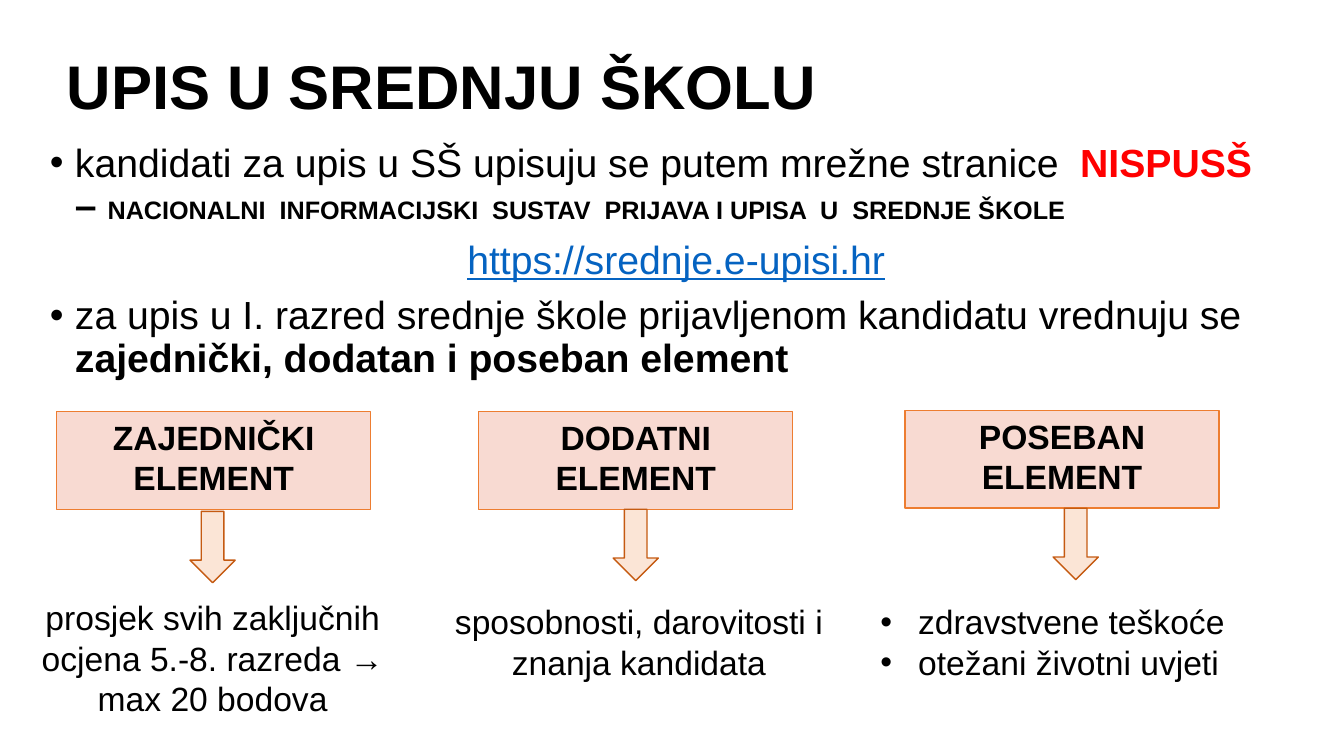
from lxml import etree
from pptx import Presentation
from pptx.dml.color import RGBColor
from pptx.enum.shapes import MSO_SHAPE
from pptx.enum.text import MSO_ANCHOR, PP_ALIGN
from pptx.oxml.ns import qn
from pptx.util import Emu, Pt

PX = 9525  # EMU in one px, 96 px to the inch
FONT = "Arial"
RECTANGLE, DOWN_ARROW = MSO_SHAPE.RECTANGLE, MSO_SHAPE.DOWN_ARROW
TOP, MIDDLE = MSO_ANCHOR.TOP, MSO_ANCHOR.MIDDLE
LEFT, CENTER = PP_ALIGN.LEFT, PP_ALIGN.CENTER

BLACK = RGBColor(0x00, 0x00, 0x00)
RED = RGBColor(0xFF, 0x00, 0x00)
LINK_BLUE = RGBColor(0x05, 0x63, 0xC1)
BOX_FILL = RGBColor(0xF8, 0xD7, 0xCE)
BOX_LINE = RGBColor(0xED, 0x7D, 0x31)
ARROW_FILL = RGBColor(0xFB, 0xE5, 0xD6)
ARROW_LINE = RGBColor(0xC5, 0x5A, 0x11)

BOX_WIDTH, BOX_HEIGHT = 299, 93
ARROW_WIDTH, ARROW_HEIGHT = 43, 68

# Heading, box left and top, arrow left and top
ELEMENTS = [
    ("ZAJEDNIČKI ELEMENT", 54, 392, 181, 487),
    ("DODATNI ELEMENT", 456, 392, 584, 485),
    ("POSEBAN ELEMENT", 862, 391, 1003, 484),
]


def place(left, top, width, height):
    return [Emu(length * PX) for length in (left, top, width, height)]


def add_text(slide, left, top, width, height, anchor=TOP):
    frame = slide.shapes.add_textbox(*place(left, top, width, height)).text_frame
    frame.word_wrap = True
    frame.vertical_anchor = anchor
    return frame


def add_paragraph(frame, first=False, align=LEFT, bullet_indent=0):
    paragraph = frame.paragraphs[0] if first else frame.add_paragraph()
    paragraph.alignment = align
    if bullet_indent:
        properties = paragraph._p.get_or_add_pPr()
        properties.set("marL", str(bullet_indent * PX))
        properties.set("indent", str(-bullet_indent * PX))
        etree.SubElement(properties, qn("a:buFont")).set("typeface", FONT)
        etree.SubElement(properties, qn("a:buChar")).set("char", "•")
    return paragraph


def add_run(paragraph, text, size, color=BLACK, bold=False, underline=False):
    run = paragraph.add_run()
    run.text = text
    run.font.name = FONT
    run.font.size = Pt(size)
    run.font.color.rgb = color
    run.font.bold = bold
    run.font.underline = underline


def add_filled_shape(slide, kind, left, top, width, height, fill, line):
    shape = slide.shapes.add_shape(kind, *place(left, top, width, height))
    shape.shadow.inherit = False
    shape.fill.solid()
    shape.fill.fore_color.rgb = fill
    shape.line.color.rgb = line
    shape.line.width = Pt(1)
    return shape


def add_element(slide, heading, box_left, box_top, arrow_left, arrow_top):
    box = add_filled_shape(slide, RECTANGLE, box_left, box_top,
                           BOX_WIDTH, BOX_HEIGHT, BOX_FILL, BOX_LINE)
    color = box.fill._xPr.find(qn("a:solidFill")).find(qn("a:srgbClr"))
    etree.SubElement(color, qn("a:alpha")).set("val", "90000")
    box.text_frame.word_wrap = True
    box.text_frame.vertical_anchor = TOP
    paragraph = add_paragraph(box.text_frame, first=True, align=CENTER)
    add_run(paragraph, heading, 24, bold=True)
    add_filled_shape(slide, DOWN_ARROW, arrow_left, arrow_top,
                     ARROW_WIDTH, ARROW_HEIGHT, ARROW_FILL, ARROW_LINE)


def add_title(slide):
    frame = add_text(slide, 54, 16, 1104, 139, MIDDLE)
    paragraph = add_paragraph(frame, first=True)
    paragraph.line_spacing = 0.9
    add_run(paragraph, "UPIS U SREDNJU ŠKOLU", 44, bold=True)


def add_body(slide):
    frame = add_text(slide, 38, 132, 1212, 250)

    website = add_paragraph(frame, first=True, bullet_indent=24)
    add_run(website, "kandidati za upis u SŠ upisuju se putem mrežne stranice  ", 28)
    add_run(website, "NISPUSŠ", 28, RED, bold=True)
    website.add_line_break()
    add_run(website, "– ", 28, bold=True)
    add_run(website, "NACIONALNI  INFORMACIJSKI  SUSTAV  PRIJAVA I UPISA  U  SREDNJE ŠKOLE",
            18, bold=True)

    address = add_paragraph(frame, align=CENTER)
    add_run(address, "https://srednje.e-upisi.hr", 28, LINK_BLUE, underline=True)

    grading = add_paragraph(frame, bullet_indent=24)
    add_run(grading, "za upis u I. razred srednje škole prijavljenom kandidatu vrednuju se ", 28)
    add_run(grading, "zajednički, dodatan i poseban element", 28, bold=True)

    for paragraph in frame.paragraphs:
        paragraph.line_spacing = 0.9
    for paragraph in (address, grading):
        paragraph.space_before = Pt(9)


def add_descriptions(slide):
    common = add_text(slide, 21, 564, 363, 126)
    add_run(add_paragraph(common, first=True, align=CENTER),
            "prosjek svih zaključnih ocjena 5.-8. razreda → max 20 bodova", 24)

    additional = add_text(slide, 423, 568, 371, 87)
    add_run(add_paragraph(additional, first=True, align=CENTER),
            "sposobnosti, darovitosti i znanja kandidata", 24)

    special = add_text(slide, 829, 568, 434, 87)
    for index, text in enumerate(("zdravstvene teškoće", "otežani životni uvjeti")):
        add_run(add_paragraph(special, first=index == 0, bullet_indent=36), text, 24)


def main():
    presentation = Presentation()
    presentation.slide_width = Emu(1280 * PX)
    presentation.slide_height = Emu(720 * PX)
    slide = presentation.slides.add_slide(presentation.slide_layouts[6])

    # Title and introduction
    add_title(slide)
    add_body(slide)

    # Three elements with arrows to their descriptions
    for element in ELEMENTS:
        add_element(slide, *element)
    add_descriptions(slide)

    presentation.save("out.pptx")


if __name__ == "__main__":
    main()
